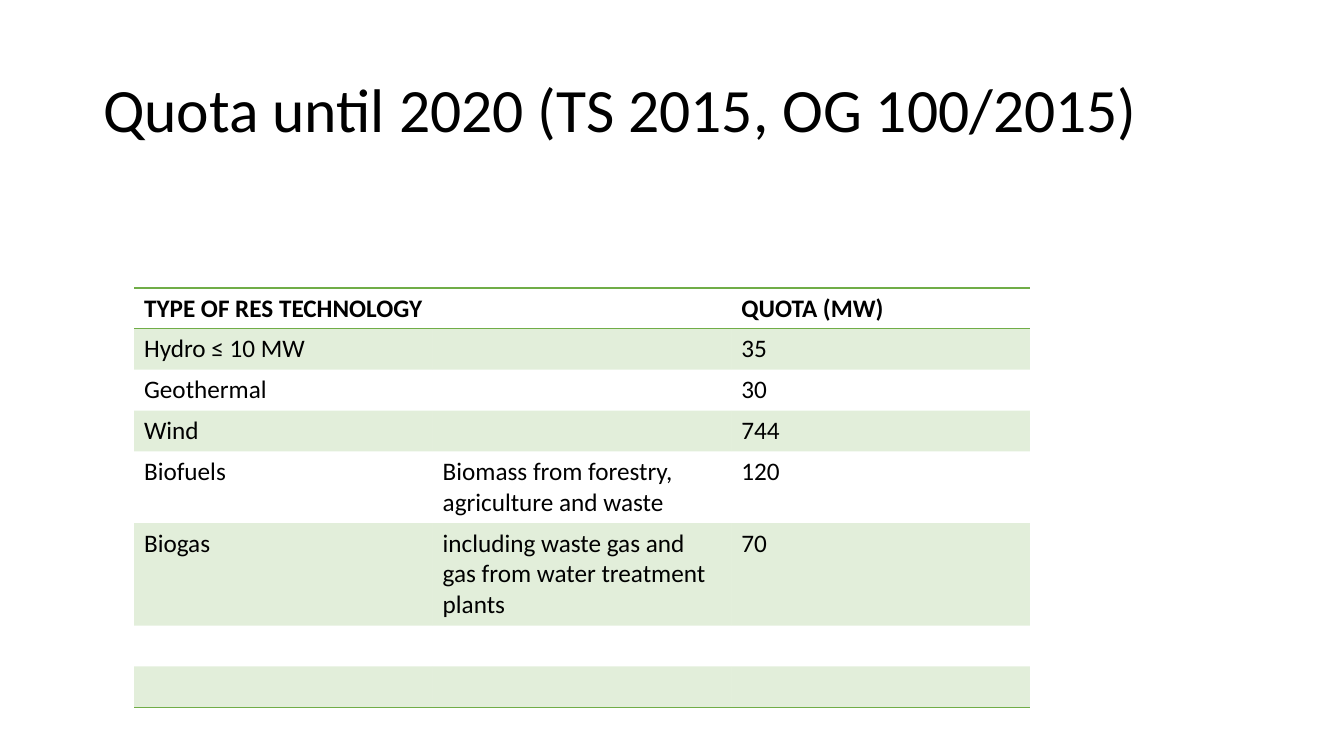
from lxml import etree
from pptx import Presentation
from pptx import util as u
from pptx.dml.color import RGBColor
from pptx.enum import text
from pptx.oxml import ns

PX = 914400 / 100.8
FONT = "Calibri"
BLACK = RGBColor(0x00, 0x00, 0x00)
GREEN = RGBColor(0x70, 0xAD, 0x47)
BAND_ALPHA = 20
PLAIN_STYLE = "{2D5ABB26-0587-4C30-8999-92F81FD0307C}"

ROWS = [
    ("TYPE OF RES TECHNOLOGY", "", "QUOTA (MW)"),
    ("Hydro ≤ 10 MW", "", "35"),
    ("Geothermal", "", "30"),
    ("Wind", "", "744"),
    ("Biofuels", "Biomass from forestry, agriculture and waste", "120"),
    ("Biogas", "including waste gas and gas from water treatment plants", "70"),
    ("", "", ""),
    ("", "", ""),
]


def px(n):
    return u.Emu(round(n * PX))


def put_text(tf, words, size=18, bold=False, spacing=1.0):
    p = tf.paragraphs[0]
    p.alignment = text.PP_ALIGN.LEFT
    p.line_spacing = spacing
    p.font.size = u.Pt(size)
    if words:
        r = p.add_run()
        r.text = words
        r.font.name = FONT
        r.font.size = u.Pt(size)
        r.font.bold = bold
        r.font.color.rgb = BLACK


def add_border(cell, side):
    ln = etree.Element(ns.qn(f"a:ln{side}"), w=str(u.Pt(1)))
    fill = etree.SubElement(ln, ns.qn("a:solidFill"))
    etree.SubElement(fill, ns.qn("a:srgbClr"), val=str(GREEN))
    cell._tc.get_or_add_tcPr().insert(0, ln)


def fill_band(cell):
    cell.fill.solid()
    cell.fill.fore_color.rgb = GREEN
    color = cell._tc.tcPr.find(".//" + ns.qn("a:srgbClr"))
    etree.SubElement(color, ns.qn("a:alpha"), val=str(BAND_ALPHA * 1000))


def add_title(s, x, y, w, h):
    sp = s.shapes.title
    sp.left, sp.top, sp.width, sp.height = map(px, (x, y, w, h))
    tf = sp.text_frame
    tf.word_wrap = True
    tf.auto_size = text.MSO_AUTO_SIZE.NONE
    tf.vertical_anchor = text.MSO_ANCHOR.MIDDLE
    put_text(tf, "Quota until 2020 (TS 2015, OG 100/2015)", size=44, spacing=0.9)


def add_quota_table(s, x, y, w, h):
    frame = s.shapes.add_table(len(ROWS), len(ROWS[0]), *map(px, (x, y, w, h)))
    table = frame.table
    table.horz_banding = False
    table._tbl.tblPr.find(ns.qn("a:tableStyleId")).text = PLAIN_STYLE
    last = len(ROWS) - 1
    for i, row in enumerate(ROWS):
        for j, words in enumerate(row):
            cell = table.cell(i, j)
            put_text(cell.text_frame, words, bold=i == 0)
            # Every second row is tinted
            if i % 2:
                fill_band(cell)
            else:
                cell.fill.background()
            # Rules around the header and below the last row
            if i in (0, last):
                add_border(cell, "B")
            if i == 0:
                add_border(cell, "T")


def main():
    prs = Presentation()
    prs.slide_width, prs.slide_height = px(1344), px(756)
    s = prs.slides.add_slide(prs.slide_layouts[5])
    add_title(s, 93, 40, 1159, 146)
    add_quota_table(s, 134, 288, 896, 327)
    prs.save("out.pptx")


if __name__ == "__main__":
    main()
